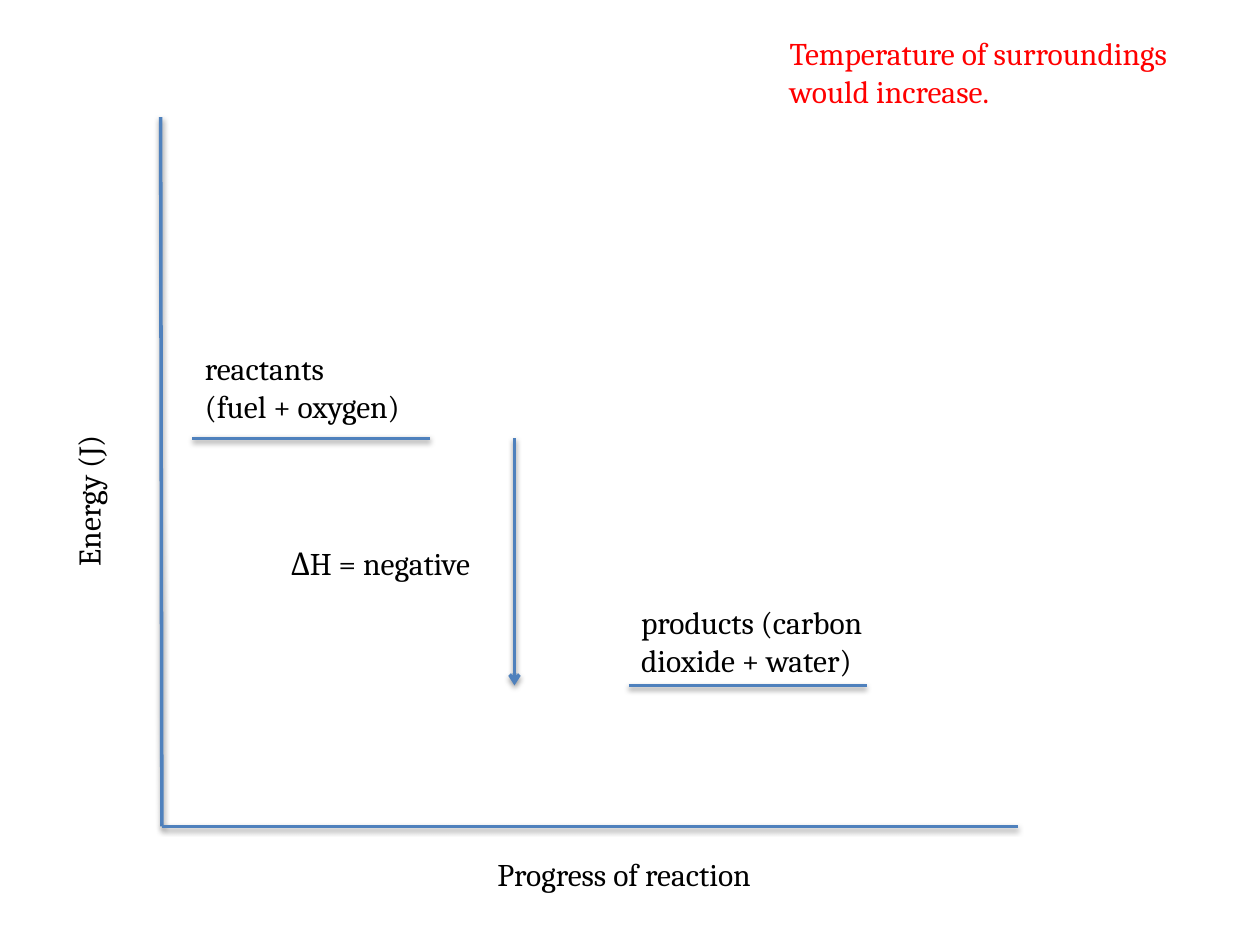
"""Build an energy level diagram of an exothermic reaction."""
from dataclasses import dataclass

from lxml import etree
from pptx import Presentation
from pptx.dml.color import RGBColor
from pptx.enum.shapes import MSO_CONNECTOR
from pptx.enum.text import MSO_AUTO_SIZE
from pptx.oxml import parse_xml
from pptx.oxml.ns import qn
from pptx.util import Pt

STRAIGHT = MSO_CONNECTOR.STRAIGHT
FIT_SHAPE = MSO_AUTO_SIZE.SHAPE_TO_FIT_TEXT
SHADOW_XML = (
    '<a:effectLst xmlns:a="http://schemas.openxmlformats.org/drawingml/2006/main">'
    '<a:outerShdw blurRad="{blur}" dist="{distance}" dir="5400000" rotWithShape="0">'
    '<a:srgbClr val="{color}"><a:alpha val="38000"/></a:srgbClr>'
    '</a:outerShdw></a:effectLst>'
)


@dataclass(frozen=True)
class Theme:
    font: str = "Cambria"
    text_size: float = 18
    line_width: float = 2
    shadow_blur: float = 3.1
    shadow_distance: float = 1.6
    text_color: str = "000000"
    accent_color: str = "FF0000"
    line_color: str = "4F81BD"
    shadow_color: str = "000000"


class DiagramBuilder:
    def __init__(self, slide, theme):
        self.slide = slide
        self.theme = theme

    def line(self, start, end, arrow=False):
        theme = self.theme
        points = [Pt(value) for value in (*start, *end)]
        connector = self.slide.shapes.add_connector(STRAIGHT, *points)
        connector.line.color.rgb = RGBColor.from_string(theme.line_color)
        connector.line.width = Pt(theme.line_width)
        if arrow:
            outline = connector.line._get_or_add_ln()
            etree.SubElement(outline, qn("a:tailEnd"), type="arrow")
        shadow = SHADOW_XML.format(
            blur=Pt(theme.shadow_blur),
            distance=Pt(theme.shadow_distance),
            color=theme.shadow_color,
        )
        connector._element.spPr.append(parse_xml(shadow))

    def label(self, left, top, width, height, lines, color=None, rotation=0):
        theme = self.theme
        box = [Pt(value) for value in (left, top, width, height)]
        shape = self.slide.shapes.add_textbox(*box)
        shape.rotation = rotation
        frame = shape.text_frame
        frame.word_wrap = True
        frame.auto_size = FIT_SHAPE
        frame.text = "\n".join(lines)
        font_format = {"name": theme.font, "size": Pt(theme.text_size)}
        for paragraph in frame.paragraphs:
            for run in paragraph.runs:
                for attribute, value in font_format.items():
                    setattr(run.font, attribute, value)
                run.font.color.rgb = RGBColor.from_string(color or theme.text_color)


def main():
    presentation = Presentation()
    presentation.slide_width, presentation.slide_height = Pt(720), Pt(540)
    slide = presentation.slides.add_slide(presentation.slide_layouts[6])
    theme = Theme()
    diagram = DiagramBuilder(slide, theme)

    axis_left, axis_bottom = 92.5, 472.3
    reactant_level, product_level = 250.5, 391.7
    reactant_left, product_left = 110, 359.3
    level_width, arrow_left = 136, 294
    axis_label_width, one_line, two_lines = 269.3, 29, 51

    diagram.line((axis_left - 0.7, 67), (axis_left, axis_bottom))
    diagram.line((axis_left, axis_bottom), (581.8, axis_bottom))
    for left, level in ((reactant_left, reactant_level), (product_left, product_level)):
        diagram.line((left, level), (left + level_width, level))
    diagram.line((arrow_left, reactant_level), (arrow_left, product_level), arrow=True)

    diagram.label(277.2, 485.3, axis_label_width, one_line, ["Progress of reaction"])
    diagram.label(-84.2, 181.4, axis_label_width, one_line, ["Energy (J)"], rotation=270)
    diagram.label(reactant_left, 196, 152, two_lines, ["reactants", "(fuel + oxygen)"])
    diagram.label(product_left, 341.2, 152, two_lines, ["products (carbon dioxide + water)"])
    diagram.label(159.1, 307.4, 148.3, one_line, ["ΔH = negative"])
    diagram.label(444.2, 15.8, 254.2, two_lines,
                  ["Temperature of surroundings would increase."], theme.accent_color)

    presentation.save("out.pptx")


if __name__ == "__main__":
    main()
